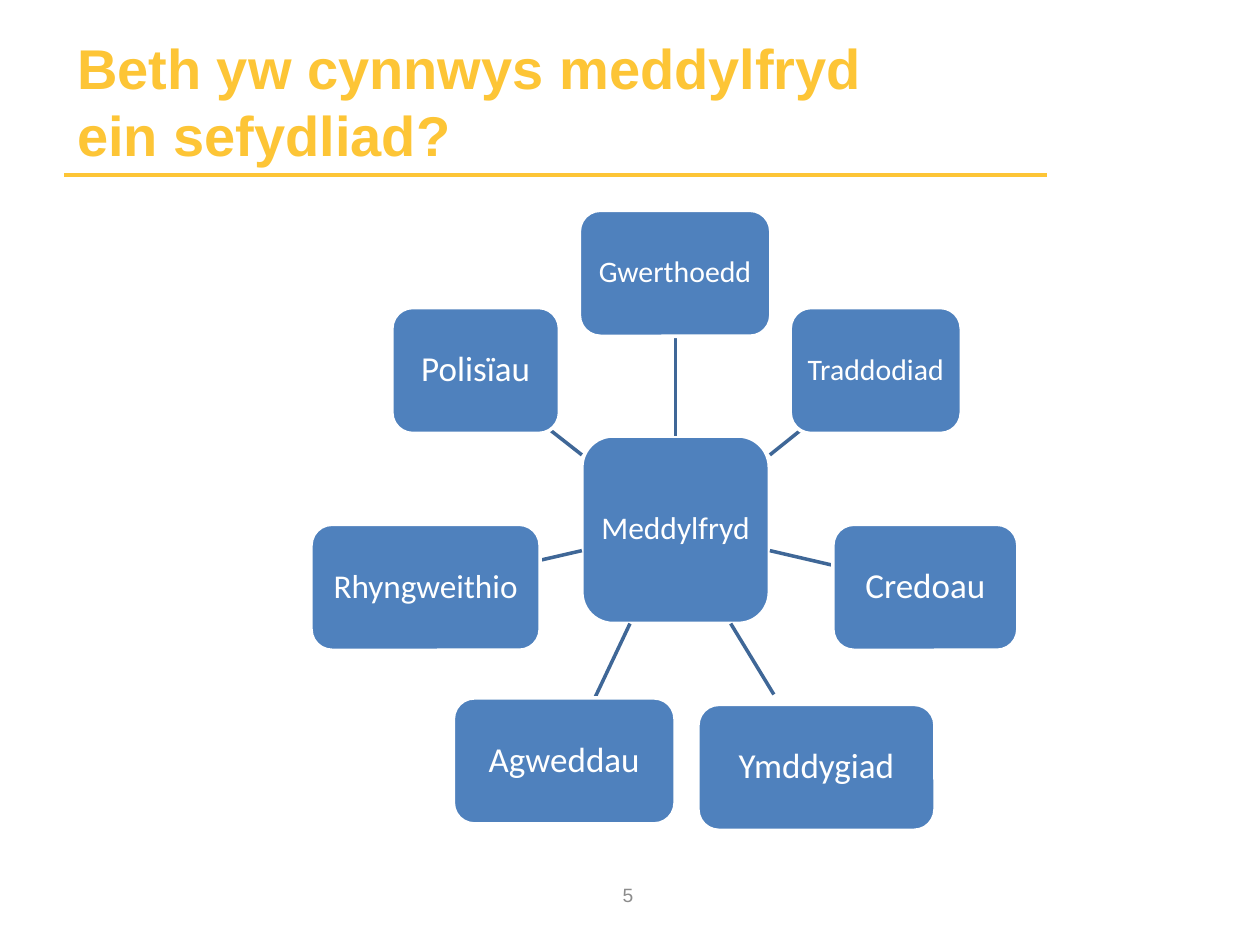
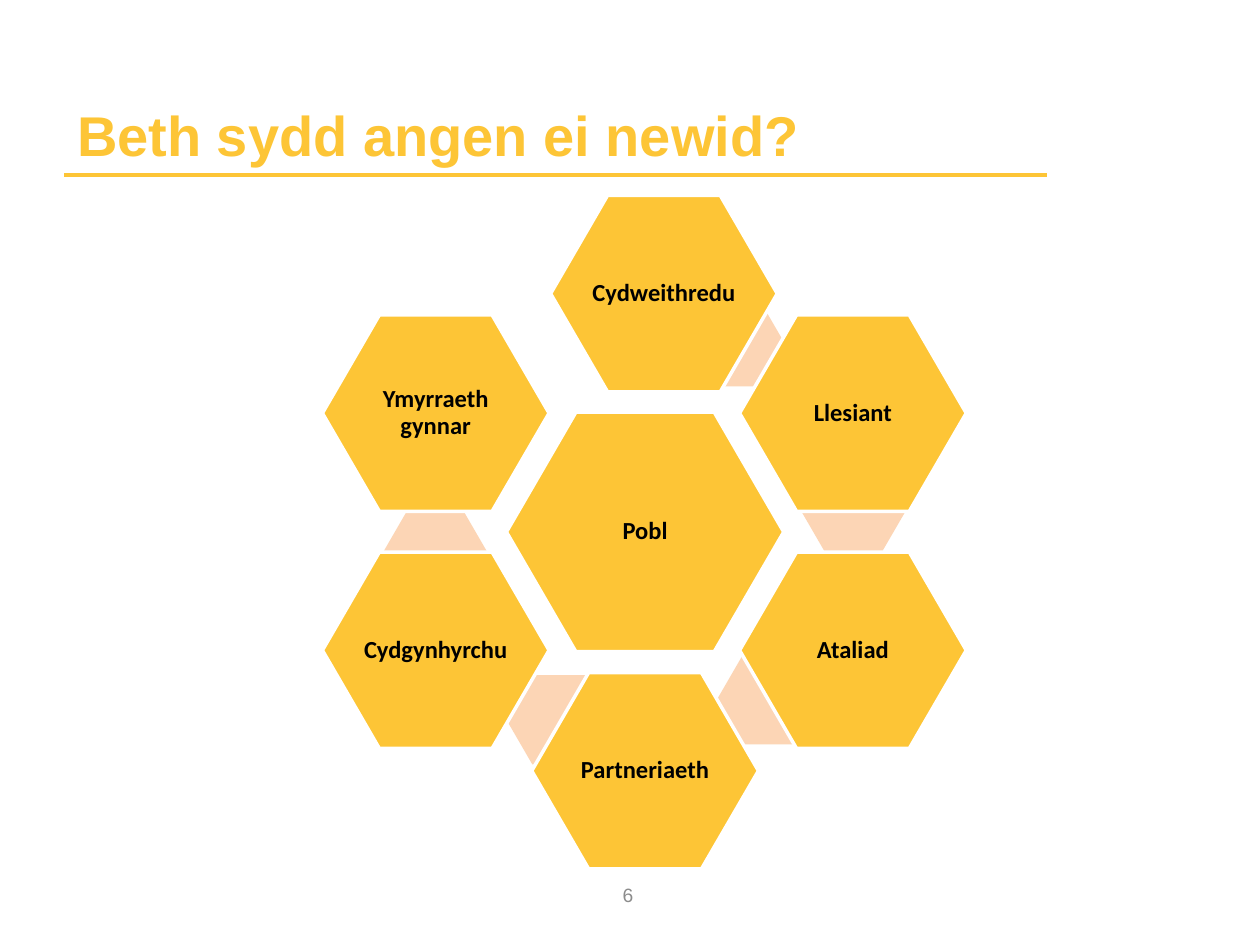
from lxml.etree import SubElement
from pptx import Presentation
from pptx.dml.color import RGBColor
from pptx.enum.shapes import MSO_CONNECTOR, MSO_SHAPE
from pptx.enum.text import MSO_ANCHOR, MSO_AUTO_SIZE, PP_ALIGN
from pptx.oxml.ns import qn
from pptx.util import Cm, Pt

COLOURS = {
    name: RGBColor.from_string(value)
    for name, value in {
        "gold": "FDC536",
        "peach": "FCD5B5",
        "blue": "4F81BD",
        "spoke": "3F6797",
        "grey": "8C8C8C",
        "white": "FFFFFF",
        "black": "000000",
    }.items()
}


def add_line(slide, start, end, colour):
    line = slide.shapes.add_connector(
        MSO_CONNECTOR.STRAIGHT, *[Cm(value) for value in (*start, *end)]
    )
    line.line.color.rgb = COLOURS[colour]
    line.line.width = Pt(2)
    SubElement(line._element.spPr, qn("a:effectLst"))


def add_node(slide, preset, box, fill, text="", size=14, colour="black", bold=False):
    shape = slide.shapes.add_shape(preset, *[Cm(value) for value in box])
    shape.shadow.inherit = False
    shape.fill.solid()
    shape.fill.fore_color.rgb = COLOURS[fill]
    if preset == MSO_SHAPE.HEXAGON:
        shape.adjustments[0] = 0.29
    if not text:
        shape.line.fill.background()
        return
    shape.line.color.rgb = COLOURS["white"]
    shape.line.width = Pt(2)
    frame = shape.text_frame
    frame.word_wrap = True
    frame.vertical_anchor = MSO_ANCHOR.MIDDLE
    margin = Cm(0.05 if bold else 0.13)
    frame.margin_left = frame.margin_right = margin
    frame.margin_top = frame.margin_bottom = margin
    frame.text = text
    paragraph = frame.paragraphs[0]
    paragraph.alignment = PP_ALIGN.CENTER
    paragraph.line_spacing = 0.9
    font = paragraph.runs[0].font
    font.name = "Calibri"
    font.size = Pt(size)
    font.bold = bold
    font.color.rgb = COLOURS[colour]


presentation = Presentation()
presentation.slide_width = Cm(25.4)
presentation.slide_height = Cm(19.05)

titles = ["Beth yw cynnwys meddylfryd\vein sefydliad?", "Beth sydd angen ei newid?"]
slides = []
for number, title_text in enumerate(titles, start=5):
    slide = presentation.slides.add_slide(presentation.slide_layouts[5])
    slides.append(slide)
    add_line(slide, (1.3, 3.53), (21.11, 3.53), "gold")

    title = slide.shapes.title
    title.left, title.top, title.width, title.height = Cm(1.3), Cm(0.74), Cm(19.81), Cm(2.77)
    title.text_frame.text = title_text
    title.text_frame.auto_size = MSO_AUTO_SIZE.NONE
    title.text_frame.vertical_anchor = MSO_ANCHOR.BOTTOM
    paragraph = title.text_frame.paragraphs[0]
    paragraph.alignment = PP_ALIGN.LEFT
    for run in paragraph.runs:
        run.font.name = "Arial"
        run.font.size = Pt(32)
        run.font.bold = True
        run.font.color.rgb = COLOURS["gold"]

    page_number = slide.shapes.add_textbox(Cm(9.7), Cm(17.53), Cm(5.92), Cm(1.02))
    page_number.text_frame.word_wrap = True
    page_number.text_frame.vertical_anchor = MSO_ANCHOR.MIDDLE
    page_number.text_frame.text = str(number)
    paragraph = page_number.text_frame.paragraphs[0]
    paragraph.alignment = PP_ALIGN.CENTER
    font = paragraph.runs[0].font
    font.name = "Arial"
    font.size = Pt(11)
    font.color.rgb = COLOURS["grey"]

mindset_slide, change_slide = slides

add_node(mindset_slide, MSO_SHAPE.ROUNDED_RECTANGLE, (11.73, 8.79, 3.78, 3.78),
         "blue", "Meddylfryd", 18, "white")
mindset_parts = [
    ("Gwerthoedd", 17, (11.68, 4.24), 3.86, (13.62, 8.79), (13.62, 6.78)),
    ("Traddodiad", 17, (15.93, 6.2), 3.45, (15.52, 9.17), (16.38, 8.48)),
    ("Credoau", 20, (16.79, 10.57), 3.73, (15.52, 11.1), (17.37, 11.53)),
    ("Ymddygiad", 20, (14.07, 14.2), 4.78, (14.73, 12.57), (15.6, 14)),
    ("Agweddau", 20, (9.14, 14.07), 4.47, (12.7, 12.57), (11.99, 14.07)),
    ("Rhyngweithio", 19, (6.27, 10.57), 4.62, (11.73, 11.1), (9.86, 11.53)),
    ("Polisïau", 20, (7.9, 6.2), 3.38, (11.73, 9.17), (10.85, 8.48)),
]
for text, size, corner, width, spoke_start, spoke_end in mindset_parts:
    add_line(mindset_slide, spoke_start, spoke_end, "spoke")
    add_node(mindset_slide, MSO_SHAPE.ROUNDED_RECTANGLE, (*corner, width, 2.54),
             "blue", text, size, "white")

add_node(change_slide, MSO_SHAPE.HEXAGON, (10.21, 8.31, 5.59, 4.83), "gold", "Pobl", bold=True)
changes = [
    ("Cydweithredu", (11.1, 3.94), (13.69, 5.99)),
    ("Llesiant", (14.91, 6.35), (16.15, 9.4)),
    ("Ataliad", (14.91, 11.13), (14.45, 13.21)),
    ("Partneriaeth", (10.72, 13.56), (10.21, 13.61)),
    ("Cydgynhyrchu", (6.5, 11.13), (7.72, 10.24)),
    ("Ymyrraeth gynnar", (6.5, 6.35), None),
]
for text, corner, link_corner in changes:
    if link_corner:
        add_node(change_slide, MSO_SHAPE.HEXAGON, (*link_corner, 2.11, 1.8), "peach")
    add_node(change_slide, MSO_SHAPE.HEXAGON, (*corner, 4.57, 3.96), "gold", text, bold=True)

presentation.save("out.pptx")
